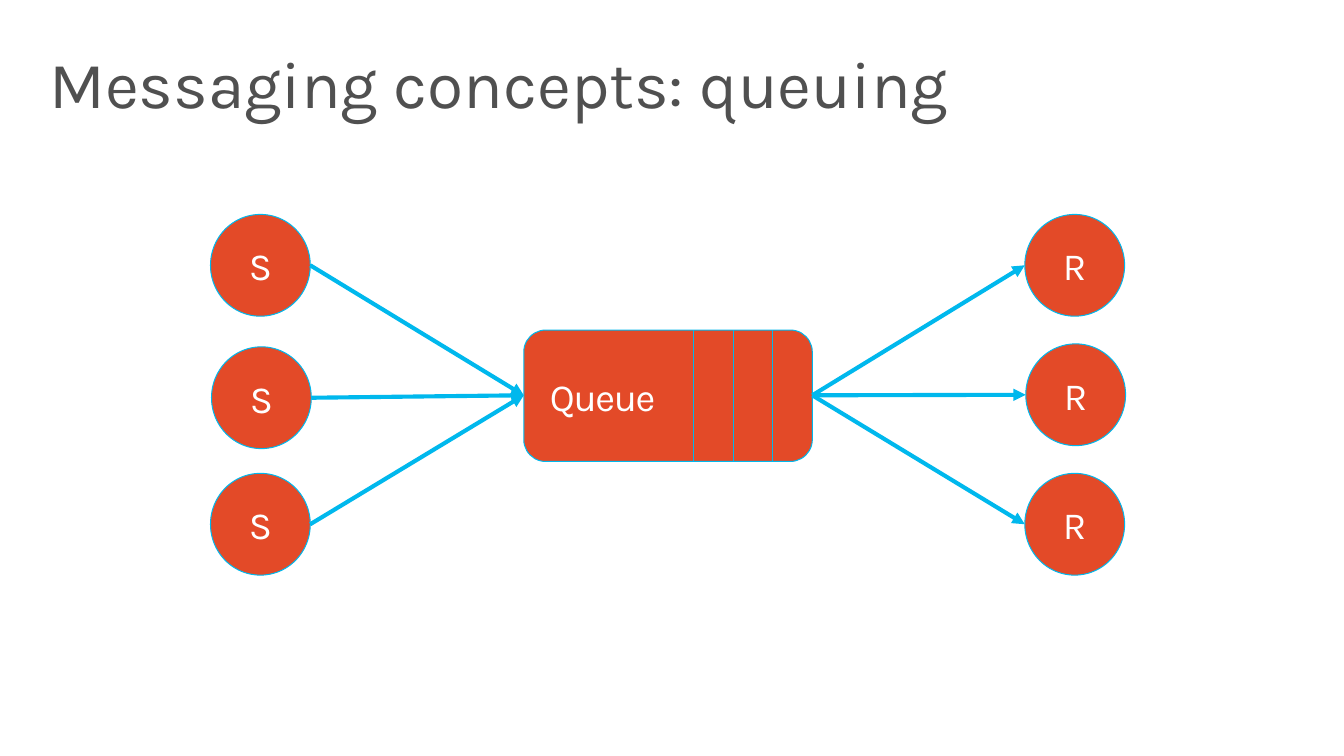
"""Build the message queuing slide: senders, a queue and receivers."""
import pptx
import pptx.util
import pptx.dml.color
import pptx.enum.shapes
import pptx.enum.text
import pptx.oxml.ns
from lxml import etree

Inches = pptx.util.Inches
SHAPE = pptx.enum.shapes.MSO_SHAPE
ALIGN = pptx.enum.text.PP_ALIGN
ORANGE, BLUE, WHITE, GRAY = "E34A28", "00B8ED", "FFFFFF", "505050"


def color(fmt, value):
    if hasattr(fmt, "solid"):
        fmt.solid()
        fmt = fmt.fore_color
    fmt.rgb = pptx.dml.color.RGBColor.from_string(value)


def write(sp, text, size=28, fill=WHITE, align=ALIGN.LEFT, left=0.04, right=0.04, top=0.04, spacing=None):
    tf = sp.text_frame
    tf.word_wrap = True
    tf.vertical_anchor = pptx.enum.text.MSO_ANCHOR.MIDDLE
    tf.margin_left, tf.margin_right = Inches(left), Inches(right)
    tf.margin_top = tf.margin_bottom = Inches(top)
    p = tf.paragraphs[0]
    p.alignment = align
    r = p.add_run()
    r.text = text
    r.font.size = pptx.util.Pt(size)
    r.font.name = "Karla"
    color(r.font.color, fill)
    if spacing is not None:
        r.font._element.set("spc", str(spacing))


prs = pptx.Presentation()
prs.slide_width, prs.slide_height = Inches(13.6), Inches(7.65)
s = prs.slides.add_slide(prs.slide_layouts[6])

title = s.shapes.add_textbox(Inches(0.3), Inches(0.33), Inches(13), Inches(1))
write(title, "Messaging concepts: queuing", size=48, fill=GRAY, left=0.2, right=0.2, top=0.05)

queue_left, queue_right, queue_top, queue_bottom, queue_mid = 5.3, 8.22, 3.34, 4.67, 4
node_w, node_h = 1.01, 1.03
senders = [(2.13, 2.17), (2.14, 3.51), (2.13, 4.79)]
receivers = [(10.37, 2.17), (10.38, 3.48), (10.37, 4.79)]

boxes = [(SHAPE.ROUNDED_RECTANGLE, "Queue", queue_left, queue_top,
          queue_right - queue_left, queue_bottom - queue_top)]
boxes += [(SHAPE.OVAL, "S", x, y, node_w, node_h) for x, y in senders]
boxes += [(SHAPE.OVAL, "R", x, y, node_w, node_h) for x, y in receivers]
for kind, text, x, y, w, h in boxes:
    sp = s.shapes.add_shape(kind, Inches(x), Inches(y), Inches(w), Inches(h))
    sp.shadow.inherit = False
    color(sp.fill, ORANGE)
    color(sp.line.fill, BLUE)
    sp.line.width = pptx.util.Pt(0.75)
    if kind == SHAPE.OVAL:
        write(sp, text, align=ALIGN.CENTER, spacing=-100)
    else:
        write(sp, text, left=0.2, spacing=-100)

lines = [(x, queue_top, x, queue_bottom, 0.75) for x in (7.02, 7.42, 7.82)]
lines += [(x + node_w, y + node_h / 2, queue_left, queue_mid, 3) for x, y in senders]
lines += [(queue_right, queue_mid, x, y + node_h / 2, 3) for x, y in receivers]
for x1, y1, x2, y2, width in lines:
    line = s.shapes.add_connector(pptx.enum.shapes.MSO_CONNECTOR.STRAIGHT,
                                  Inches(x1), Inches(y1), Inches(x2), Inches(y2))
    color(line.line.fill, BLUE)
    line.line.width = pptx.util.Pt(width)
    if width == 3:
        etree.SubElement(line.line._get_or_add_ln(), pptx.oxml.ns.qn("a:tailEnd"), type="triangle")
    etree.SubElement(line._element.spPr, pptx.oxml.ns.qn("a:effectLst"))

prs.save("out.pptx")
